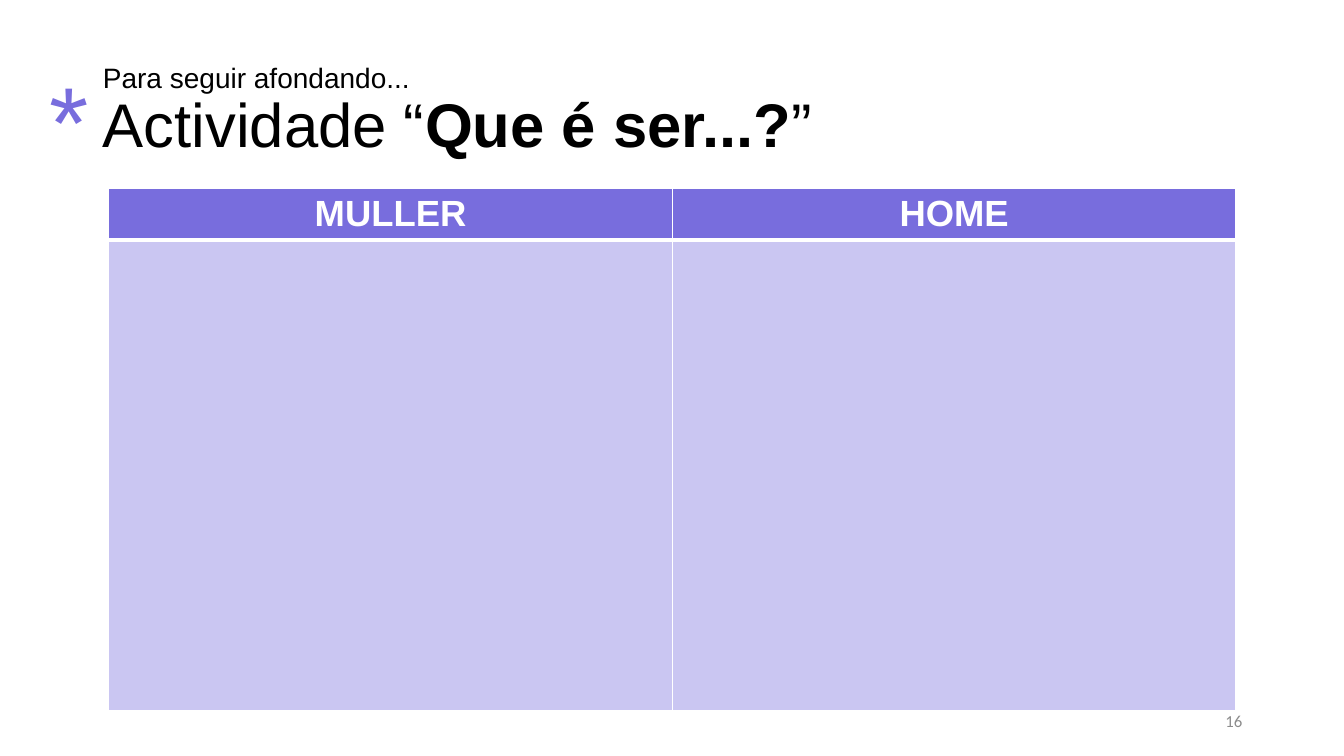
from lxml import etree
from pptx import Presentation
from pptx.dml.color import RGBColor
from pptx.enum.text import MSO_ANCHOR as Anchor, PP_ALIGN as Align
from pptx.oxml.ns import qn
from pptx.util import Inches, Pt

BLACK = RGBColor(0x00, 0x00, 0x00)
WHITE = RGBColor(0xFF, 0xFF, 0xFF)
GREY = RGBColor(0x8C, 0x8C, 0x8C)
PURPLE = RGBColor(0x78, 0x6D, 0xDD)
LILAC = RGBColor(0xCA, 0xC6, 0xF2)

TITLE_ONLY = 5
HEADINGS = ["MULLER", "HOME"]
HEADER_HEIGHT = 0.51


def add_span(para, text, size, color=BLACK, font="Arial", bold=False):
    span = para.add_run()
    span.text = text
    span.font.name = font
    span.font.size = Pt(size)
    span.font.bold = bold
    span.font.color.rgb = color


def add_label(page, box, text, size, align=Align.LEFT, spacing=1.0, **style):
    label = page.shapes.add_textbox(*map(Inches, box))
    frame = label.text_frame
    frame.word_wrap = True
    frame.vertical_anchor = Anchor.MIDDLE
    para = frame.paragraphs[0]
    para.alignment = align
    para.line_spacing = spacing
    add_span(para, text, size, **style)


def fill_title(page, box):
    title = page.shapes.title
    title.left, title.top, title.width, title.height = map(Inches, box)
    frame = title.text_frame
    frame.word_wrap = True
    frame.vertical_anchor = Anchor.MIDDLE
    para = frame.paragraphs[0]
    para.alignment = Align.LEFT
    para.line_spacing = 0.9
    add_span(para, "Para seguir afondando...", 20)
    para.add_line_break()
    add_span(para, "Actividade “", 44)
    add_span(para, "Que é ser...?", 44, bold=True)
    add_span(para, "”", 44)


def set_borders(cell, **widths):
    """Draw white borders; widths maps the side tags to points."""
    properties = cell._tc.get_or_add_tcPr()
    for position, (side, width) in enumerate(widths.items()):
        line = etree.Element(qn(f"a:{side}"), w=str(Pt(width)))
        fill = etree.SubElement(line, qn("a:solidFill"))
        etree.SubElement(fill, qn("a:srgbClr"), val=str(WHITE))
        properties.insert(position, line)


def add_comparison_table(page, box):
    left, top, width, height = box
    table = page.shapes.add_table(2, len(HEADINGS), *map(Inches, box)).table
    table.rows[0].height = Inches(HEADER_HEIGHT)
    table.rows[1].height = Inches(height - HEADER_HEIGHT)
    for column, heading in enumerate(HEADINGS):
        table.columns[column].width = Inches(width / len(HEADINGS))
        header, body = table.cell(0, column), table.cell(1, column)
        for cell, color in ((header, PURPLE), (body, LILAC)):
            cell.fill.solid()
            cell.fill.fore_color.rgb = color
        set_borders(header, lnL=1, lnR=1, lnT=1, lnB=3)
        set_borders(body, lnL=1, lnR=1, lnT=3, lnB=1)
        para = header.text_frame.paragraphs[0]
        para.alignment = Align.CENTER
        add_span(para, heading, 26, color=WHITE, bold=True)


def build_activity_slide(deck):
    page = deck.slides.add_slide(deck.slide_layouts[TITLE_ONLY])
    fill_title(page, (0.92, 0.49, 11.5, 1.25))
    add_comparison_table(page, (1.08, 1.87, 11.18, 5.18))
    add_label(page, (9.42, 6.95, 3, 0.4), "16", 12, align=Align.RIGHT,
              color=GREY, font="Calibri")
    add_label(page, (0.39, 0.62, 1.04, 1.25), "*", 72, spacing=0.9, color=PURPLE)


def main():
    deck = Presentation()
    deck.slide_width, deck.slide_height = Inches(13.33), Inches(7.5)
    build_activity_slide(deck)
    deck.save("out.pptx")


if __name__ == "__main__":
    main()
